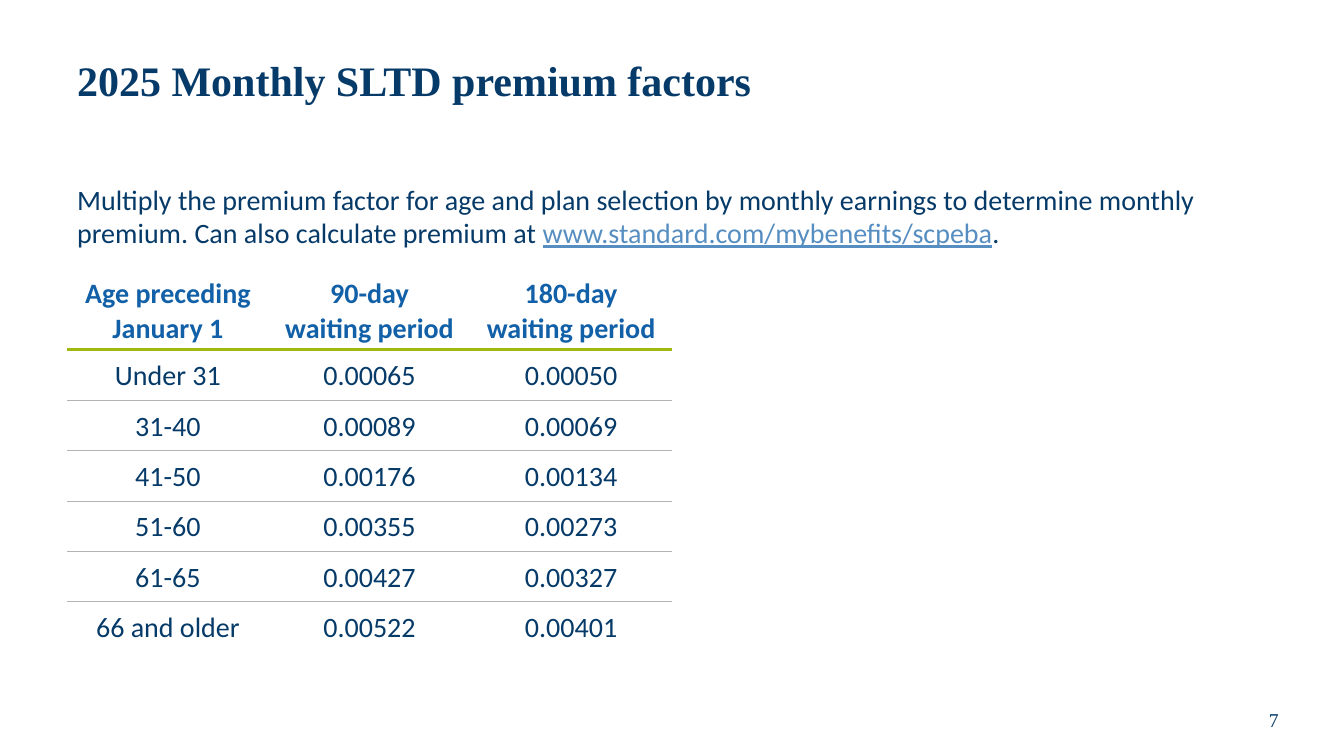
from lxml import etree
from pptx import Presentation
from pptx import util as u
from pptx.dml.color import RGBColor
from pptx.enum import text
from pptx.oxml.ns import qn

NAVY, BLUE, SKY, GREEN, GREY = "063A68", "1260A7", "568EC1", "A0B810", "B2B2B2"
SERIF, SANS = "Times New Roman", "Calibri"
RULE, HEAVY_RULE = (GREY, 0.5), (GREEN, 2.25)

INTRO = ("Multiply the premium factor for age and plan selection by monthly earnings "
         "to determine monthly premium. Can also calculate premium at ")
LINK = "www.standard.com/mybenefits/scpeba"
FACTORS = [
    ("Age preceding\nJanuary 1", "90-day\nwaiting period", "180-day\nwaiting period"),
    ("Under 31", "0.00065", "0.00050"),
    ("31-40", "0.00089", "0.00069"),
    ("41-50", "0.00176", "0.00134"),
    ("51-60", "0.00355", "0.00273"),
    ("61-65", "0.00427", "0.00327"),
    ("66 and older", "0.00522", "0.00401"),
]


def color(value):
    return RGBColor.from_string(value)


class PageBuilder:
    """Holds the text style and the current slide, on a 20 by 30 grid."""

    def __init__(self, deck):
        self.column = deck.slide_width / 20
        self.row = deck.slide_height / 30
        self.style = {"name": SANS, "size": u.Pt(20), "bold": False, "underline": False}
        self.page = deck.slides.add_slide(deck.slide_layouts[6])

    def place(self, left, top, width, height):
        return (u.Emu(round(left * self.column)), u.Emu(round(top * self.row)),
                u.Emu(round(width * self.column)), u.Emu(round(height * self.row)))

    def format_span(self, span, ink, **changes):
        for name, value in {**self.style, **changes}.items():
            setattr(span.font, name, value)
        span.font.color.rgb = color(ink)

    def text_box(self, area, spans, anchor="TOP", align="LEFT", spacing=None):
        box = self.page.shapes.add_textbox(*self.place(*area))
        frame = box.text_frame
        frame.word_wrap = True
        frame.vertical_anchor = getattr(text.MSO_ANCHOR, anchor)
        para = frame.paragraphs[0]
        para.alignment = getattr(text.PP_ALIGN, align)
        para.line_spacing = spacing
        for words, ink, changes in spans:
            span = para.add_run()
            span.text = words
            self.format_span(span, ink, **changes)

    def borders(self, cell, top, bottom):
        properties = cell._tc.get_or_add_tcPr()
        for side, rule in (("L", None), ("R", None), ("T", top), ("B", bottom)):
            line = etree.SubElement(properties, qn(f"a:ln{side}"))
            if rule is None:
                etree.SubElement(line, qn("a:noFill"))
                continue
            ink, width = rule
            line.set("w", str(u.Pt(width)))
            fill = etree.SubElement(line, qn("a:solidFill"))
            etree.SubElement(fill, qn("a:srgbClr"), val=ink)

    def fill_cell(self, cell, words, header):
        cell.fill.background()
        cell.vertical_anchor = text.MSO_ANCHOR.MIDDLE
        para = cell.text_frame.paragraphs[0]
        para.text = words
        para.alignment = text.PP_ALIGN.CENTER
        if not header:
            para.line_spacing = 1.07
            margins = {"margin_left": 0.07, "margin_right": 0.07,
                       "margin_top": 0, "margin_bottom": 0}
            for name, value in margins.items():
                setattr(cell, name, u.Inches(value))
        for span in para.runs:
            self.format_span(span, BLUE if header else NAVY, bold=header)

    def table(self, area, values, header_rows, body_rows):
        frame = self.page.shapes.add_table(
            len(values), len(values[0]), *self.place(*area))
        grid = frame.table
        grid.first_row = grid.horz_banding = False
        # One rule between each pair of rows, none at the outer edges
        rules = [None, HEAVY_RULE] + [RULE] * (len(values) - 2) + [None]
        for index, record in enumerate(values):
            height = body_rows if index else header_rows
            grid.rows[index].height = u.Emu(round(height * self.row))
            for position, words in enumerate(record):
                cell = grid.cell(index, position)
                self.borders(cell, rules[index], rules[index + 1])
                self.fill_cell(cell, words, header=index == 0)


def main():
    deck = Presentation()
    deck.slide_width, deck.slide_height = u.Inches(13.33), u.Inches(7.5)
    builder = PageBuilder(deck)

    # Title
    builder.text_box((1, 1, 18, 4.6), [
        ("2025 Monthly SLTD premium factors", NAVY,
         {"name": SERIF, "size": u.Pt(30), "bold": True}),
    ], anchor="MIDDLE", spacing=0.9)

    # Introduction
    builder.text_box((1, 7.04, 18, 20.52), [
        (INTRO, NAVY, {}),
        (LINK, SKY, {"underline": True}),
        (".", NAVY, {}),
    ])

    # Premium factors
    builder.table((1, 10.8, 9, 15.08), FACTORS, header_rows=3.08, body_rows=2)

    # Page number
    builder.text_box((18.08, 27.56, 1.75, 2), [
        ("7", NAVY, {"name": SERIF, "size": u.Pt(14)}),
    ], anchor="MIDDLE", align="CENTER")

    deck.save("out.pptx")


if __name__ == "__main__":
    main()
